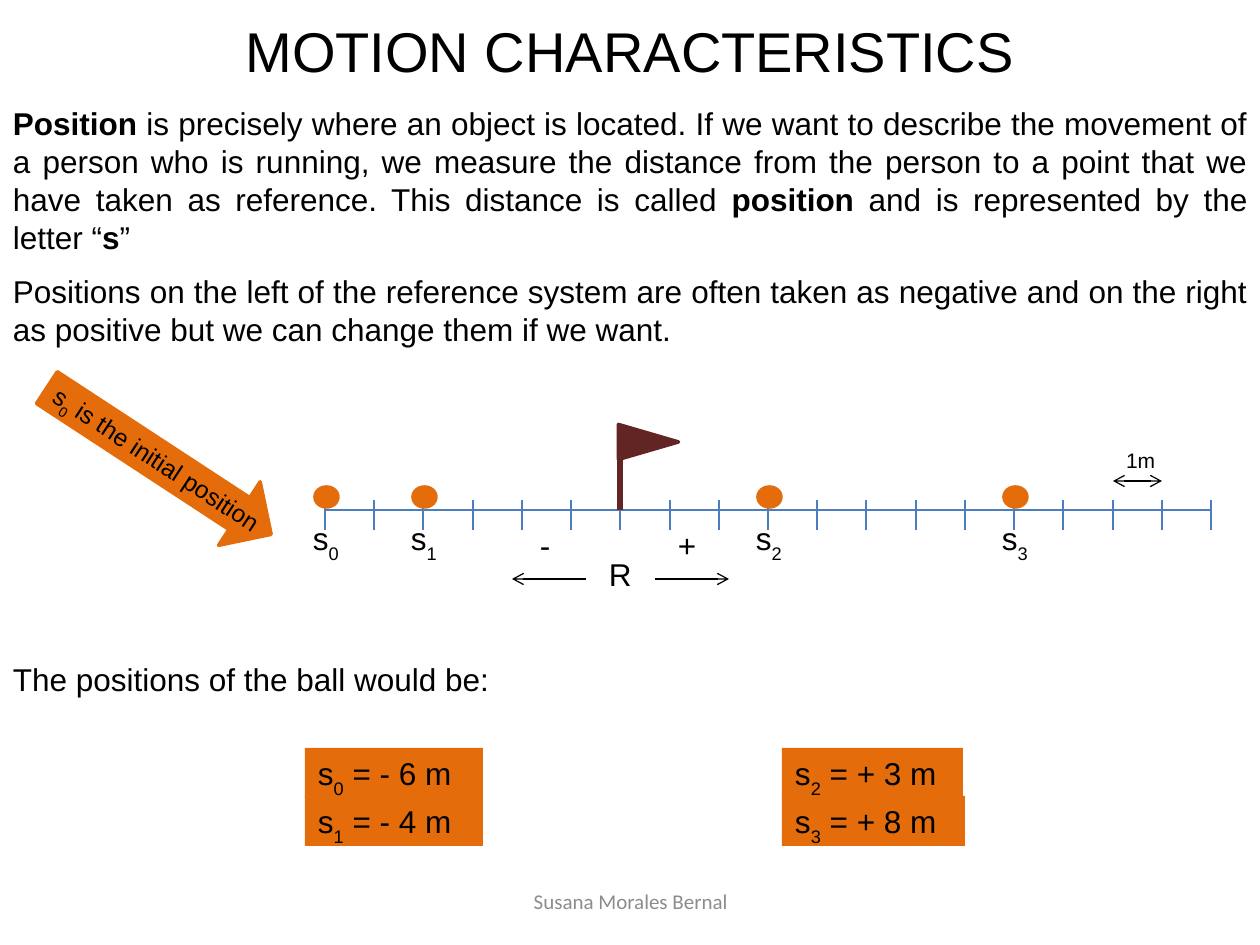
from dataclasses import dataclass
from typing import NamedTuple

from lxml.etree import SubElement
from pptx import Presentation
from pptx.dml.color import RGBColor
from pptx.enum.shapes import MSO_CONNECTOR, MSO_SHAPE
from pptx.enum.text import MSO_ANCHOR, PP_ALIGN
from pptx.oxml.ns import qn
from pptx.util import Emu, Pt

PX_PER_INCH = 126


@dataclass(frozen=True)
class Theme:
    ink: str = "000000"
    axis: str = "4B7EBC"
    flag: str = "632523"
    accent: str = "E46C0A"
    muted: str = "8C8C8C"
    font: str = "Arial"
    footer_font: str = "Calibri"
    title: int = 32
    body: int = 18
    label: int = 14
    small: int = 12


class Box(NamedTuple):
    x: int
    y: int
    w: int
    h: int


class Ball(NamedTuple):
    index: int
    metres: int


class Card(NamedTuple):
    text: str
    box: Box


THEME = Theme()
AXIS_LEFT, AXIS_RIGHT, AXIS_Y = 325, 1211, 510
FIRST_METRE, LAST_METRE = -6, 12
ARROW_TILT = 33.2

PARAGRAPHS = [
    ("*Position* is precisely where an object is located. If we want to describe "
     "the movement of a person who is running, we measure the distance from the "
     "person to a point that we have taken as reference. This distance is called "
     "*position* and is represented by the letter “*s*”", Box(0, 98, 1260, 165)),
    ("Positions on the left of the reference system are often taken as negative "
     "and on the right as positive but we can change them if we want.",
     Box(0, 266, 1260, 89)),
]
BALLS = [Ball(0, -6), Ball(1, -4), Ball(2, 3), Ball(3, 8)]
CARDS = [
    Card("s~0~ = - 6 m", Box(305, 748, 178, 50)),
    Card("s~1~ = - 4 m", Box(305, 796, 178, 50)),
    Card("s~2~ = + 3 m", Box(782, 748, 181, 50)),
    Card("s~3~ = + 8 m", Box(782, 796, 183, 50)),
]


def px(value: float) -> Emu:
    return Emu(round(value * 914400 / PX_PER_INCH))


def rgb(color: str) -> RGBColor:
    return RGBColor.from_string(color)


def axis_x(metres: int) -> int:
    span = LAST_METRE - FIRST_METRE
    return round(AXIS_LEFT + (AXIS_RIGHT - AXIS_LEFT) * (metres - FIRST_METRE) / span)


def write(sp, text: str, *, size: int = THEME.body, color: str = THEME.ink,
          font: str = THEME.font, align=PP_ALIGN.LEFT, anchor=MSO_ANCHOR.TOP,
          wrap: bool = True, inset: int = 13) -> None:
    """Fill a shape with text; *...* marks bold and ~...~ marks subscript."""
    tf = sp.text_frame
    tf.word_wrap = wrap
    tf.vertical_anchor = anchor
    tf.margin_left = px(inset)
    p = tf.paragraphs[0]
    p.alignment = align
    for i, weight_part in enumerate(text.split("*")):
        for j, part in enumerate(weight_part.split("~")):
            if not part:
                continue
            r = p.add_run()
            r.text = part
            r.font.name, r.font.size = font, Pt(size)
            r.font.bold = i % 2 == 1
            r.font.color.rgb = rgb(color)
            if j % 2:
                r._r.get_or_add_rPr().set("baseline", "-30000")


def add_text(slide, box: Box, text: str, rotation: float = 0, **fmt) -> None:
    sp = slide.shapes.add_textbox(*map(px, box))
    sp.rotation = rotation
    write(sp, text, **fmt)


def add_shape(slide, kind: MSO_SHAPE, box: Box, color: str, *,
              outline: bool = True, rotation: float = 0):
    sp = slide.shapes.add_shape(kind, *map(px, box))
    sp.shadow.inherit = False
    sp.rotation = rotation
    sp.fill.solid()
    sp.fill.fore_color.rgb = rgb(color)
    if outline:
        sp.line.color.rgb = rgb(color)
        sp.line.width = Pt(2)
    else:
        sp.line.fill.background()
    return sp


def add_line(slide, x1: int, y1: int, x2: int, y2: int, color: str, *,
             width: float = 0.75, ends: tuple[str, ...] = ()) -> None:
    """Draw a line; ends lists headEnd and tailEnd where arrowheads belong."""
    line = slide.shapes.add_connector(MSO_CONNECTOR.STRAIGHT, *map(px, (x1, y1, x2, y2)))
    line.line.color.rgb = rgb(color)
    line.line.width = Pt(width)
    for end in ends:
        SubElement(line.line._get_or_add_ln(), qn(f"a:{end}"), type="arrow")
    SubElement(line._element.spPr, qn("a:effectLst"))


def add_title(slide, box: Box, text: str) -> None:
    title = slide.shapes.title
    title.left, title.top, title.width, title.height = map(px, box)
    write(title, text, size=THEME.title, align=PP_ALIGN.CENTER)


def add_axis(slide) -> None:
    add_line(slide, AXIS_LEFT, AXIS_Y, AXIS_RIGHT, AXIS_Y, THEME.axis)
    for metres in range(FIRST_METRE, LAST_METRE + 1):
        x = axis_x(metres)
        add_line(slide, x, AXIS_Y - 10, x, AXIS_Y + 20, THEME.axis)


def add_reference(slide) -> None:
    """Draw the flag at the origin, its sign arrows and the unit length."""
    x = axis_x(0)
    add_line(slide, x, AXIS_Y, x, 432, THEME.flag, width=3)
    add_shape(slide, MSO_SHAPE.ISOSCELES_TRIANGLE, Box(x + 11, 412, 35, 60),
              THEME.flag, rotation=90)
    add_text(slide, Box(x - 24, 549, 60, 50), "R")
    for sign, start, end, label_x in (("+", 655, 729, 665), ("-", 586, 512, 527)):
        add_line(slide, start, 579, end, 579, THEME.ink, ends=("tailEnd",))
        add_text(slide, Box(label_x, 520, 39, 50), sign)
    add_line(slide, axis_x(10), 481, axis_x(11), 481, THEME.ink,
             ends=("headEnd", "tailEnd"))
    add_text(slide, Box(axis_x(10), 441, 69, 38), "1m", size=THEME.small)


def add_ball(slide, ball: Ball) -> None:
    x = axis_x(ball.metres)
    add_shape(slide, MSO_SHAPE.FLOWCHART_CONNECTOR, Box(x - 10, 487, 23, 20), THEME.accent)
    add_text(slide, Box(x - 25, 513, 53, 50), f"s~{ball.index}~", wrap=False)


def add_card(slide, card: Card) -> None:
    sp = add_shape(slide, MSO_SHAPE.RECTANGLE, card.box, THEME.accent, outline=False)
    write(sp, card.text)


def main() -> None:
    prs = Presentation()
    prs.slide_width, prs.slide_height = px(1260), px(945)
    slide = prs.slides.add_slide(prs.slide_layouts[5])

    add_title(slide, Box(0, 10, 1260, 81), "MOTION CHARACTERISTICS")
    for text, box in PARAGRAPHS:
        add_text(slide, box, text, align=PP_ALIGN.JUSTIFY)
    add_axis(slide)
    add_reference(slide)
    for ball in BALLS:
        add_ball(slide, ball)
    add_text(slide, Box(0, 654, 507, 44), "The positions of the ball would be:")
    for card in CARDS:
        add_card(slide, card)
    add_shape(slide, MSO_SHAPE.RIGHT_ARROW, Box(25, 423, 268, 76), THEME.accent,
              rotation=ARROW_TILT)
    add_text(slide, Box(10, 436, 286, 43), "s~0~ is the initial position",
             rotation=ARROW_TILT, size=THEME.label, wrap=False, inset=27)
    add_text(slide, Box(431, 876, 399, 50), "Susana Morales Bernal", size=THEME.small,
             color=THEME.muted, font=THEME.footer_font, align=PP_ALIGN.CENTER,
             anchor=MSO_ANCHOR.MIDDLE)
    prs.save("out.pptx")


if __name__ == "__main__":
    main()
